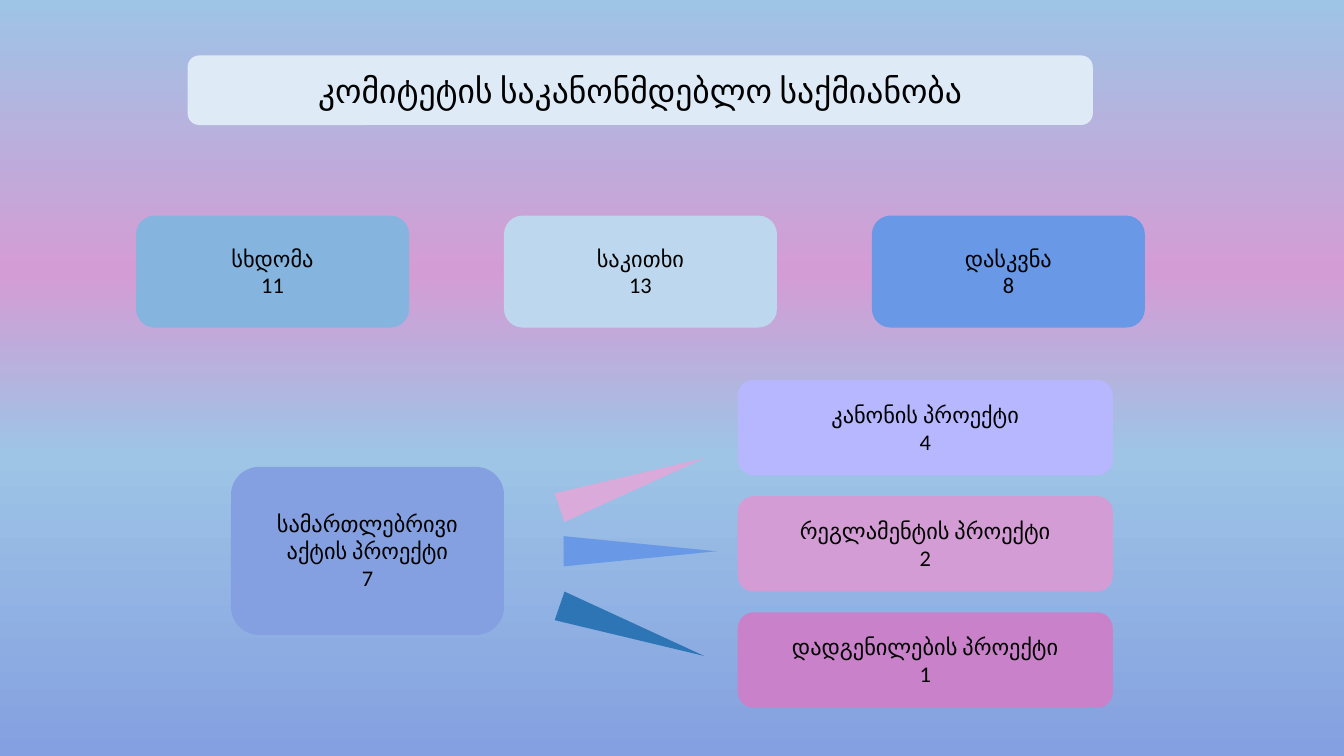
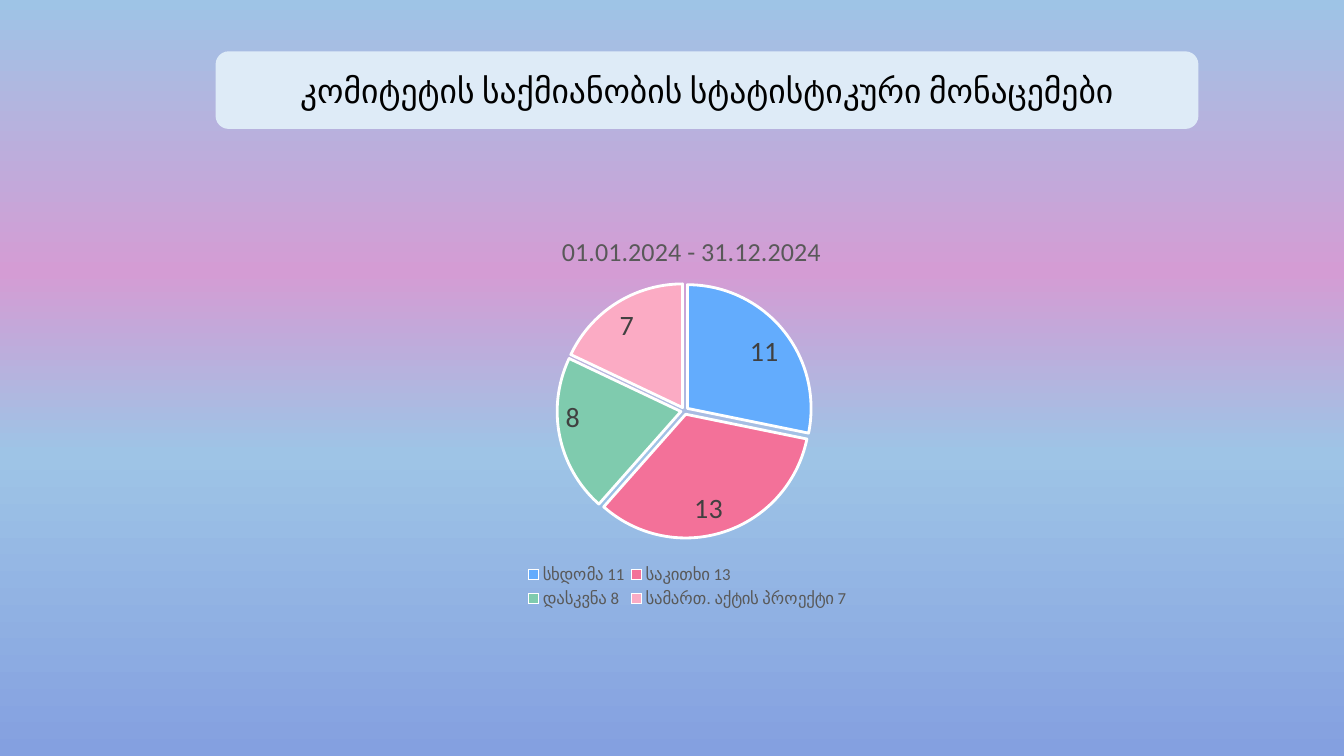
from pptx import Presentation
from pptx.chart.data import CategoryChartData
from pptx.dml.color import RGBColor
from pptx.enum.chart import XL_CHART_TYPE, XL_LABEL_POSITION, XL_LEGEND_POSITION
from pptx.enum.shapes import MSO_SHAPE
from pptx.enum.text import MSO_ANCHOR, PP_ALIGN
from pptx.oxml import parse_xml
from pptx.oxml.ns import nsdecls, qn
from pptx.util import Pt

FONT = "Calibri"
BLACK = RGBColor(0x00, 0x00, 0x00)
WHITE = RGBColor(0xFF, 0xFF, 0xFF)
DARK_GREY = RGBColor(0x40, 0x40, 0x40)
GREY = RGBColor(0x59, 0x59, 0x59)
BAND = RGBColor(0xDE, 0xEB, 0xF7)
SKY = RGBColor(0x9E, 0xC4, 0xE6)
STEEL = RGBColor(0x85, 0xB4, 0xDF)
PALE_BLUE = RGBColor(0xBD, 0xD7, 0xEE)
BLUE = RGBColor(0x68, 0x98, 0xE6)
DEEP_BLUE = RGBColor(0x2E, 0x75, 0xB6)
PERIWINKLE = RGBColor(0x84, 0xA0, 0xE0)
LAVENDER = RGBColor(0xB7, 0xB7, 0xFF)
ORCHID = RGBColor(0xD4, 0x9C, 0xD4)
DARK_ORCHID = RGBColor(0xC9, 0x81, 0xC9)
LIGHT_ORCHID = RGBColor(0xDA, 0xAA, 0xDA)
SLICES = [RGBColor(0x63, 0xAC, 0xFD), RGBColor(0xF3, 0x71, 0x99),
          RGBColor(0x7F, 0xCB, 0xAE), RGBColor(0xFB, 0xAB, 0xC4)]
BACKGROUND_STOPS = [(0, SKY), (36, ORCHID), (60, SKY), (100, PERIWINKLE)]


def add_filled(slide, preset, box, fill, text="", size=16):
    """Add a borderless preset shape with centred black text."""
    shape = slide.shapes.add_shape(preset, *[Pt(length) for length in box])
    shape.shadow.inherit = False
    shape.fill.solid()
    shape.fill.fore_color.rgb = fill
    shape.line.fill.background()
    if text:
        shape.text_frame.text = text
        shape.text_frame.vertical_anchor = MSO_ANCHOR.MIDDLE
        for paragraph in shape.text_frame.paragraphs:
            paragraph.alignment = PP_ALIGN.CENTER
            paragraph.font.name = FONT
            paragraph.font.size = Pt(size)
            paragraph.font.color.rgb = BLACK
    return shape


def set_layout(part, index, **fractions):
    """Place a chart part by fractions of the chart area."""
    for old in part.findall(qn("c:layout")):
        part.remove(old)
    target = '<c:layoutTarget val="inner"/>' if part.tag == qn("c:plotArea") else ""
    modes = '<c:xMode val="edge"/><c:yMode val="edge"/>'
    values = "".join(f'<c:{key} val="{value}"/>' for key, value in fractions.items())
    part.insert(index, parse_xml(
        f'<c:layout {nsdecls("c")}><c:manualLayout>{target}{modes}{values}'
        '</c:manualLayout></c:layout>'))


prs = Presentation()
prs.slide_width, prs.slide_height = Pt(960), Pt(540)

# Shared background
background = prs.slide_master.background.fill
background.gradient()
background.gradient_angle = 270
stops = prs.slide_master.element.find(".//" + qn("a:gsLst"))
for stop in list(stops):
    stops.remove(stop)
for percent, color in BACKGROUND_STOPS:
    stops.append(parse_xml(
        f'<a:gs {nsdecls("a")} pos="{percent * 1000}"><a:srgbClr val="{color}"/></a:gs>'))

# Titles on their bands
slides = []
for heading, band_box in [
    ("კომიტეტის საკანონმდებლო საქმიანობა", (134, 39.6, 646.6, 49.7)),
    ("კომიტეტის საქმიანობის სტატისტიკური მონაცემები", (154, 36.7, 702, 55.4)),
]:
    slide = prs.slides.add_slide(prs.slide_layouts[5])
    slides.append(slide)
    title = slide.shapes.title
    band = add_filled(slide, MSO_SHAPE.ROUNDED_RECTANGLE, band_box, BAND)
    title.element.addprevious(band.element)
    title.left, title.top, title.width, title.height = [Pt(length) for length in band_box]
    title.text_frame.text = heading
    title.text_frame.vertical_anchor = MSO_ANCHOR.MIDDLE
    heading_line = title.text_frame.paragraphs[0]
    heading_line.alignment = PP_ALIGN.CENTER
    heading_font = heading_line.runs[0].font
    heading_font.name, heading_font.size = FONT, Pt(24)
    heading_font.color.rgb = BLACK
activity, statistics = slides

# Legislative activity: totals, then the drafts by kind
totals = [("სხდომა", 11, STEEL), ("საკითხი", 13, PALE_BLUE), ("დასკვნა", 8, BLUE)]
for column, (label, count, color) in enumerate(totals):
    add_filled(activity, MSO_SHAPE.ROUNDED_RECTANGLE, (97.2 + 262.8 * column, 154, 195, 80),
               color, f"{label}\n{count}")

add_filled(activity, MSO_SHAPE.ROUNDED_RECTANGLE, (165, 333.5, 195, 120), PERIWINKLE,
           "სამართლებრივი აქტის პროექტი\n7")

drafts = [("კანონის პროექტი", 4, LAVENDER), ("რეგლამენტის პროექტი", 2, ORCHID),
          ("დადგენილების პროექტი", 1, DARK_ORCHID)]
for row, (label, count, color) in enumerate(drafts):
    add_filled(activity, MSO_SHAPE.ROUNDED_RECTANGLE, (527, 271.4 + 83 * row, 268, 68.2),
               color, f"{label}\n{count}")

pointers = [(440.6, 290.2, 71.1, LIGHT_ORCHID), (446.4, 339.1, 90, BLUE),
            (440.6, 396, 109.1, DEEP_BLUE)]
for left, top, angle, color in pointers:
    pointer = add_filled(activity, MSO_SHAPE.ISOSCELES_TRIANGLE, (left, top, 21.6, 109.4), color)
    pointer.rotation = angle

# Statistics pie
counts = CategoryChartData()
counts.categories = ["სხდომა 11", "საკითხი 13", "დასკვნა 8", "სამართ. აქტის პროექტი 7"]
counts.add_series("Series 1", (11, 13, 8, 7))
pie = statistics.shapes.add_chart(
    XL_CHART_TYPE.PIE, Pt(279.4), Pt(152), Pt(423.4), Pt(285.8), counts).chart
pie.font.name, pie.font.size = FONT, Pt(10)
pie.font.color.rgb = BLACK

pie.has_title = True
pie.chart_title.text_frame.text = "01.01.2024 - 31.12.2024"
period_font = pie.chart_title.text_frame.paragraphs[0].runs[0].font
period_font.name, period_font.size, period_font.bold = FONT, Pt(18.6), False
period_font.color.rgb = GREY

pie.has_legend = True
pie.legend.position = XL_LEGEND_POSITION.BOTTOM
pie.legend.include_in_layout = False
pie.legend.font.name, pie.legend.font.size = FONT, Pt(12)
pie.legend.font.color.rgb = GREY

plot = pie.plots[0]
plot.vary_by_categories = True
series = plot.series[0]
series.format.line.color.rgb = WHITE
for index, color in enumerate(SLICES):
    piece = series.points[index].format
    piece.fill.solid()
    piece.fill.fore_color.rgb = color
    piece.line.color.rgb = WHITE
    piece.line.width = Pt(2)
pie.element.find(".//" + qn("c:ser")).find(qn("c:spPr")).addnext(
    parse_xml(f'<c:explosion {nsdecls("c")} val="3"/>'))

plot.has_data_labels = True
labels = plot.data_labels
labels.show_value, labels.show_percentage = True, False
labels.position = XL_LABEL_POSITION.INSIDE_END
labels.font.name, labels.font.size = FONT, Pt(20)
labels.font.color.rgb = DARK_GREY

chart_parts = pie.element.find(qn("c:chart"))
set_layout(chart_parts.find(qn("c:title")), 1, x=0.28, y=0.04)
set_layout(chart_parts.find(qn("c:plotArea")), 0, x=0.28, y=0.17, w=0.43, h=0.65)
set_layout(chart_parts.find(qn("c:legend")), 1, x=0.22, y=0.87, w=0.56, h=0.13)

prs.save("out.pptx")
